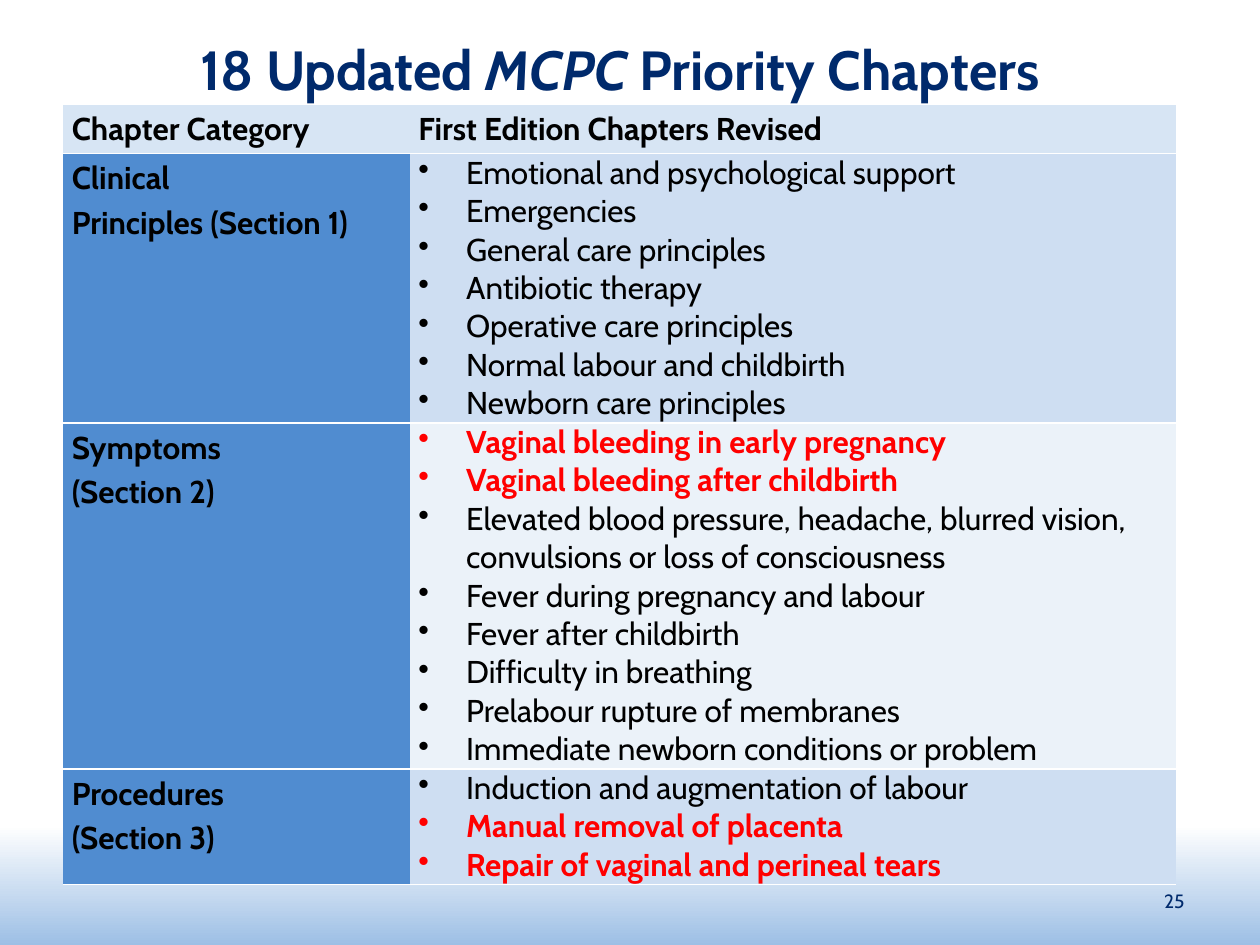
from lxml import etree
from pptx import Presentation
from pptx.dml.color import RGBColor
from pptx.enum.shapes import MSO_SHAPE
from pptx.enum.text import MSO_ANCHOR, MSO_AUTO_SIZE, PP_ALIGN
from pptx.oxml.ns import qn
from pptx.util import Inches, Pt

RECTANGLE = MSO_SHAPE.RECTANGLE
MIDDLE = MSO_ANCHOR.MIDDLE
NO_AUTOFIT = MSO_AUTO_SIZE.NONE
CENTER, RIGHT = PP_ALIGN.CENTER, PP_ALIGN.RIGHT

FONT = "Cabin"
NAVY = RGBColor(0x00, 0x2A, 0x6C)
BLACK = RGBColor(0x00, 0x00, 0x00)
RED = RGBColor(0xFF, 0x00, 0x00)
WHITE = RGBColor(0xFF, 0xFF, 0xFF)
FOOTER_BLUE = RGBColor(0x9D, 0xBF, 0xE5)
HEADER_FILL = RGBColor(0xD7, 0xE5, 0xF4)
CATEGORY_FILL = RGBColor(0x50, 0x8C, 0xD0)
BAND_FILLS = [RGBColor(0xCE, 0xDE, 0xF2), RGBColor(0xEB, 0xF2, 0xF9)]

NO_STYLE_ID = "{2D5ABB26-0587-4C30-8999-92F81FD0307C}"
COLUMN_WIDTHS = [2.75, 6.08]
ROW_HEIGHTS = [0.39, 2.11, 2.62, 0.87]
HEADINGS = ["Chapter Category", "First Edition Chapters Revised"]
CATEGORIES = [
    (["Clinical", "Principles (Section 1)"], [
        "Emotional and psychological support",
        "Emergencies",
        "General care principles",
        "Antibiotic therapy",
        "Operative care principles",
        "Normal labour and childbirth",
        "Newborn care principles",
    ]),
    (["Symptoms", "(Section 2)"], [
        "Vaginal bleeding in early pregnancy",
        "Vaginal bleeding after childbirth",
        "Elevated blood pressure, headache, blurred vision, "
        "convulsions or loss of consciousness",
        "Fever during pregnancy and labour",
        "Fever after childbirth",
        "Difficulty in breathing",
        "Prelabour rupture of membranes",
        "Immediate newborn conditions or problem",
    ]),
    (["Procedures", "(Section 3)"], [
        "Induction and augmentation of labour",
        "Manual removal of placenta",
        "Repair of vaginal and perineal tears",
    ]),
]
HIGHLIGHTED = {
    "Vaginal bleeding in early pregnancy",
    "Vaginal bleeding after childbirth",
    "Manual removal of placenta",
    "Repair of vaginal and perineal tears",
}


def set_font(font, size, color, bold=False):
    font.name = FONT
    font.size = Pt(size)
    font.color.rgb = color
    font.bold = bold


def add_footer_gradient(slide):
    shape = slide.shapes.add_shape(
        RECTANGLE, Inches(0), Inches(2.75), Inches(10), Inches(4.75))
    shape.shadow.inherit = False
    shape.line.fill.background()
    shape.fill.gradient()
    shape.fill.gradient_angle = 270
    stops = shape.fill.gradient_stops
    for stop, position, color in zip(stops, (0.8, 1), (WHITE, FOOTER_BLUE)):
        stop.position = position
        stop.color.rgb = color
    # Send behind the title placeholder
    slide.shapes._spTree.insert(2, shape._element)


def add_title(slide):
    title = slide.shapes.title
    title.left, title.top = Inches(0.42), Inches(0.25)
    title.width, title.height = Inches(9), Inches(0.58)
    frame = title.text_frame
    frame.auto_size = NO_AUTOFIT
    frame.vertical_anchor = MIDDLE
    paragraph = frame.paragraphs[0]
    paragraph.alignment = CENTER
    set_font(paragraph.font, 31.5, NAVY, bold=True)
    for text, italic in (("18 Updated ", False), ("MCPC", True),
                         (" Priority Chapters", False)):
        run = paragraph.add_run()
        run.text = text
        run.font.italic = italic


def add_bullet(paragraph, color):
    properties = paragraph._p.get_or_add_pPr()
    properties.set("marL", str(Inches(0.38)))
    properties.set("indent", str(-Inches(0.38)))
    bullet_color = etree.SubElement(properties, qn("a:buClr"))
    etree.SubElement(bullet_color, qn("a:srgbClr"), val=str(color))
    etree.SubElement(properties, qn("a:buChar"), char="•")


def add_border(cell, side):
    """Draw a white one-point line on a side, 'lnT' or 'lnB'."""
    line = etree.Element(qn(f"a:{side}"), w=str(Pt(1)))
    fill = etree.SubElement(line, qn("a:solidFill"))
    etree.SubElement(fill, qn("a:srgbClr"), val=str(WHITE))
    cell._tc.get_or_add_tcPr().insert(0, line)


def format_cell(cell, color):
    cell.margin_left = cell.margin_right = Inches(0.07)
    cell.margin_top = cell.margin_bottom = 0
    cell.fill.solid()
    cell.fill.fore_color.rgb = color
    for side in ("lnB", "lnT"):
        add_border(cell, side)


def fill_label_cell(cell, lines, color):
    format_cell(cell, color)
    cell.text = "\n".join(lines)
    for paragraph in cell.text_frame.paragraphs:
        paragraph.line_spacing = 1.15
        set_font(paragraph.font, 18, BLACK, bold=True)


def fill_chapter_cell(cell, chapters, color):
    format_cell(cell, color)
    cell.text = "\n".join(chapters)
    for paragraph, chapter in zip(cell.text_frame.paragraphs, chapters):
        highlighted = chapter in HIGHLIGHTED
        text_color = RED if highlighted else BLACK
        add_bullet(paragraph, text_color)
        set_font(paragraph.font, 18, text_color, bold=highlighted)


def add_chapter_table(slide):
    table = slide.shapes.add_table(
        len(ROW_HEIGHTS), len(COLUMN_WIDTHS), Inches(0.5), Inches(0.83),
        Inches(sum(COLUMN_WIDTHS)), Inches(sum(ROW_HEIGHTS))).table
    table._tbl.tblPr.find(qn("a:tableStyleId")).text = NO_STYLE_ID
    for column, width in zip(table.columns, COLUMN_WIDTHS):
        column.width = Inches(width)
    for row, height in zip(table.rows, ROW_HEIGHTS):
        row.height = Inches(height)
    for index, heading in enumerate(HEADINGS):
        fill_label_cell(table.cell(0, index), [heading], HEADER_FILL)
    for index, (label, chapters) in enumerate(CATEGORIES):
        fill_label_cell(table.cell(index + 1, 0), label, CATEGORY_FILL)
        fill_chapter_cell(table.cell(index + 1, 1), chapters,
                          BAND_FILLS[index % 2])


def add_page_number(slide):
    box = slide.shapes.add_textbox(
        Inches(7.17), Inches(6.95), Inches(2.33), Inches(0.4))
    frame = box.text_frame
    frame.word_wrap = True
    frame.vertical_anchor = MIDDLE
    paragraph = frame.paragraphs[0]
    paragraph.text = "25"
    paragraph.alignment = RIGHT
    set_font(paragraph.font, 11, NAVY)


def main():
    presentation = Presentation()
    presentation.slide_width = Inches(10)
    presentation.slide_height = Inches(7.5)
    slide = presentation.slides.add_slide(presentation.slide_layouts[5])
    add_footer_gradient(slide)
    add_title(slide)
    add_chapter_table(slide)
    add_page_number(slide)
    presentation.save("out.pptx")


if __name__ == "__main__":
    main()
